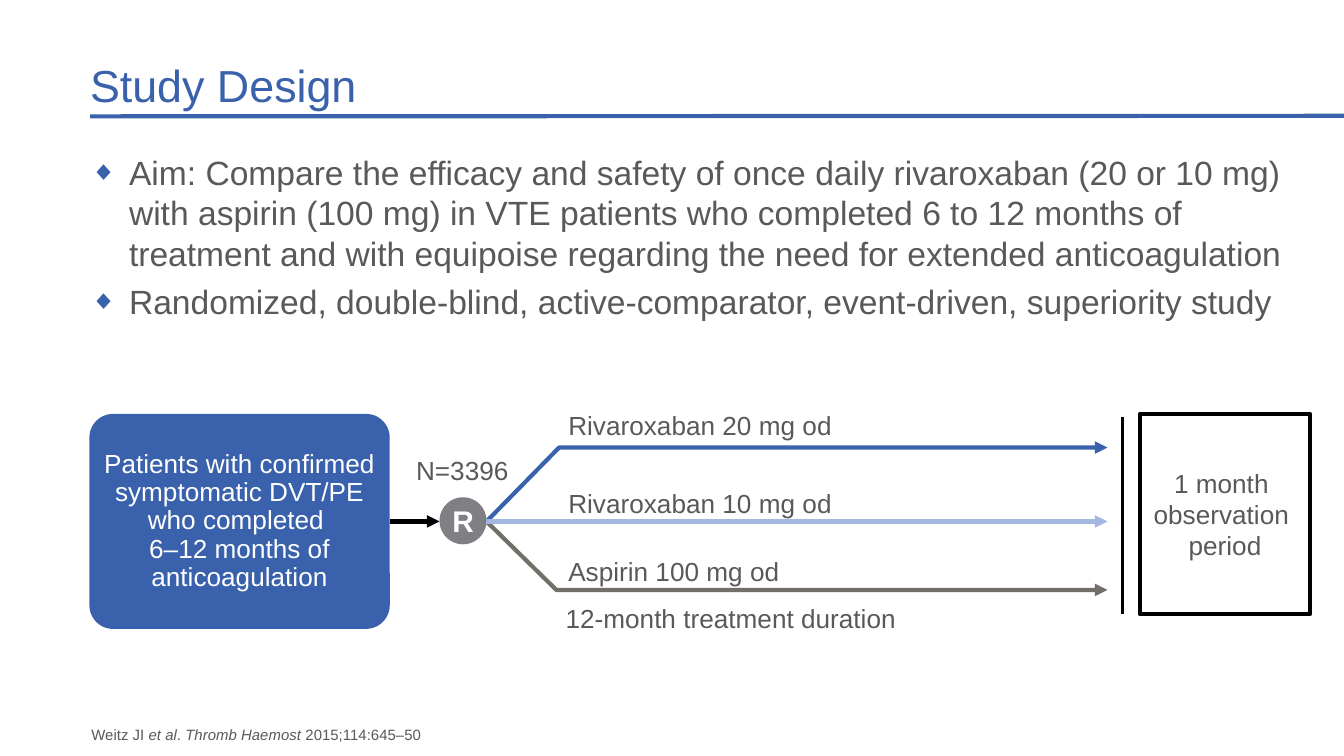
from dataclasses import dataclass, field

from lxml import etree
from pptx import Presentation
from pptx import util as u
from pptx.dml import color
from pptx.enum import shapes, text
from pptx.oxml import ns

BLUE, PALE, TAUPE = "3961AC", "A3B8E0", "726F69"
GREY, DISC, BLACK, WHITE = "595959", "807F83", "000000", "FFFFFF"
FONT = "Arial"
COLUMNS = 100  # square grid modules across the slide
LEFT, MIDDLE = 6.7, 38.8  # text margin and the axis of the flow
ARM_START, ARM_END = 36.2, 82.4
LABEL_LEFT, LABEL_WIDTH = 41.3, 38.9

prs = Presentation()
prs.slide_width = u.Inches(10)
prs.slide_height = prs.slide_width * 9 // 16


@dataclass
class Words:
    """Runs of (text, italic) and the format they share."""
    runs: list
    size: float = 14
    color: str = GREY
    bold: bool = False
    para: dict = field(default_factory=dict)
    frame: dict = field(default_factory=dict)
    inset: tuple = (1, 0.5)


@dataclass
class Arm:
    label: str
    color: str
    y: float
    bend: float
    label_box: tuple
    spacing: float


def g(n: float) -> int:
    """Length of n grid modules."""
    return round(prs.slide_width / COLUMNS * n)


def rgb(value: str) -> color.RGBColor:
    return color.RGBColor.from_string(value)


def apply(target, values: dict) -> None:
    for name, value in values.items():
        setattr(target, name, value)


def place(sp, box: tuple) -> None:
    apply(sp, dict(zip(("left", "top", "width", "height"), map(g, box))))


def sub(parent, tag: str, **attrs: str):
    return etree.SubElement(parent, ns.qn(tag), attrs)


def write(p, words: Words) -> None:
    """Add the runs; a newline inside a run becomes a line break."""
    apply(p, words.para)
    for content, italic in words.runs:
        for i, line in enumerate(content.split("\n")):
            if i:
                p.add_line_break()
            r = p.add_run()
            r.text = line
            apply(r.font, {"name": FONT, "size": u.Pt(words.size),
                           "bold": words.bold, "italic": italic})
            r.font.color.rgb = rgb(words.color)


def fill_frame(sp, words: Words) -> None:
    tf = sp.text_frame
    x, y = map(g, words.inset)
    apply(tf, {"word_wrap": True, "auto_size": text.MSO_AUTO_SIZE.NONE,
               "margin_left": x, "margin_right": x,
               "margin_top": y, "margin_bottom": y, **words.frame})
    write(tf.paragraphs[0], words)


def add_text(slide, box: tuple, words: Words) -> None:
    fill_frame(slide.shapes.add_textbox(*map(g, box)), words)


def add_box(slide, kind, box: tuple, fill: str, words: Words, line: str = ""):
    sp = slide.shapes.add_shape(kind, *map(g, box))
    sp.shadow.inherit = False
    sp.fill.solid()
    sp.fill.fore_color.rgb = rgb(fill)
    if line:
        sp.line.color.rgb, sp.line.width = rgb(line), u.Pt(2)
    else:
        sp.line.fill.background()
    fill_frame(sp, words)
    return sp


def add_path(slide, points: list, stroke: str, width: float = 2.25,
             arrow: bool = True) -> None:
    """Straight connector for two points, open outline for more."""
    pts = [(g(x), g(y)) for x, y in points]
    if len(pts) == 2:
        sp = slide.shapes.add_connector(shapes.MSO_CONNECTOR.STRAIGHT, *pts[0], *pts[1])
    else:
        builder = slide.shapes.build_freeform(*pts[0])
        builder.add_line_segments(pts[1:], close=False)
        sp = builder.convert_to_shape()
        sp.fill.background()
    sp.line.color.rgb, sp.line.width = rgb(stroke), u.Pt(width)
    if arrow:
        sub(sp.line._get_or_add_ln(), "a:tailEnd", type="triangle")
    sub(sp._element.spPr, "a:effectLst")


def add_bullet(p, words: Words) -> None:
    pPr = p._p.get_or_add_pPr()
    indent = g(2.9)
    pPr.set("marL", str(indent))
    pPr.set("indent", str(-indent))
    sub(sub(pPr, "a:buClr"), "a:srgbClr", val=BLUE)
    sub(pPr, "a:buSzPct", val="80000")
    sub(pPr, "a:buFont", typeface=FONT)
    sub(pPr, "a:buChar", char="◆")
    write(p, words)


def add_heading_and_list(slide) -> None:
    add_path(slide, [(LEFT, 8.66), (COLUMNS, 8.62)], BLUE, arrow=False)
    title, body = slide.placeholders
    place(title, (LEFT, 4.3, 90.6, 4))
    fill_frame(title, Words([("Study Design", False)], 24, BLUE, inset=(0, 0),
                            para={"alignment": text.PP_ALIGN.LEFT},
                            frame={"vertical_anchor": text.MSO_ANCHOR.BOTTOM}))
    place(body, (LEFT, 11.3, 90.6, 39.9))
    tf = body.text_frame
    apply(tf, {"margin_left": 0, "margin_right": 0, "margin_top": 0,
               "margin_bottom": 0, "auto_size": text.MSO_AUTO_SIZE.NONE})
    items = [
        "Aim: Compare the efficacy and safety of once daily rivaroxaban (20 or 10 mg) "
        "with aspirin (100 mg) in VTE patients who completed 6 to 12 months of "
        "treatment and with equipoise regarding the need for extended anticoagulation",
        "Randomized, double-blind, active-comparator, event-driven, superiority study",
    ]
    for i, item in enumerate(items):
        p = tf.add_paragraph() if i else tf.paragraphs[0]
        add_bullet(p, Words([(item, False)], 18,
                            para={"space_before": u.Pt(4.5 if i else 0)}))


def add_flow(slide) -> None:
    centred = {"alignment": text.PP_ALIGN.CENTER}
    middle = {"vertical_anchor": text.MSO_ANCHOR.MIDDLE}
    kinds = shapes.MSO_SHAPE

    add_box(slide, kinds.RECTANGLE, (84.8, 30.8, 12.7, 14.9), WHITE,
            Words([("1 month \nobservation \nperiod", False)], para=centred,
                  frame={**middle, "word_wrap": False}), BLACK)
    patients = add_box(
        slide, kinds.ROUNDED_RECTANGLE, (6.65, 30.8, 22.35, 16), BLUE,
        Words([("Patients with confirmed symptomatic DVT/PE who completed "
                "\n6–12 months of anticoagulation", False)], color=WHITE,
              para={**centred, "line_spacing": 0.9}, frame=middle, inset=(0.4, 0.5)))
    patients.adjustments[0] = 0.11
    add_path(slide, [(29, MIDDLE), (32.7, MIDDLE)], BLACK)
    add_text(slide, (29, 33.3, 10.8, 3.4), Words([("N=3396", False)], para=centred))
    add_box(slide, kinds.OVAL, (32.7, 37, 3.5, 3.5), DISC,
            Words([("R", False)], 16, WHITE, True, centred,
                  {**middle, "word_wrap": False}, (0, 0)))

    arms = [
        Arm("Rivaroxaban 20 mg od", BLUE, 33.3, 41.6, (30, 3.4), 1.0),
        Arm("Aspirin 100 mg od", TAUPE, 43.9, 41.4, (40.5, 3.7), 1.15),
        Arm("Rivaroxaban 10 mg od", PALE, MIDDLE, ARM_START, (35.4, 3.7), 1.15),
    ]
    for arm in arms:
        bend = [(arm.bend, arm.y)] if arm.y != MIDDLE else []
        add_path(slide, [(ARM_START, MIDDLE), *bend, (ARM_END, arm.y)], arm.color)
        top, height = arm.label_box
        add_text(slide, (LABEL_LEFT, top, LABEL_WIDTH, height),
                 Words([(arm.label, False)], para={"line_spacing": arm.spacing}))
    add_text(slide, (41.1, 44.3, 26.7, 4.7),
             Words([("12-month treatment duration", False)], frame={"word_wrap": False}))
    add_path(slide, [(83.5, 31), (83.5, 45.7)], BLACK, 1.5, arrow=False)


def main() -> None:
    slide = prs.slides.add_slide(prs.slide_layouts[1])
    add_heading_and_list(slide)
    add_flow(slide)
    citation = [("Weitz JI ", False), ("et al", True), (". ", False),
                ("Thromb Haemost ", True), ("2015;114:645–50", False)]
    add_text(slide, (6.8, 54, 90.5, 1.3),
             Words(citation, 8, inset=(0, 0),
                   frame={"vertical_anchor": text.MSO_ANCHOR.BOTTOM}))
    prs.save("out.pptx")


if __name__ == "__main__":
    main()
